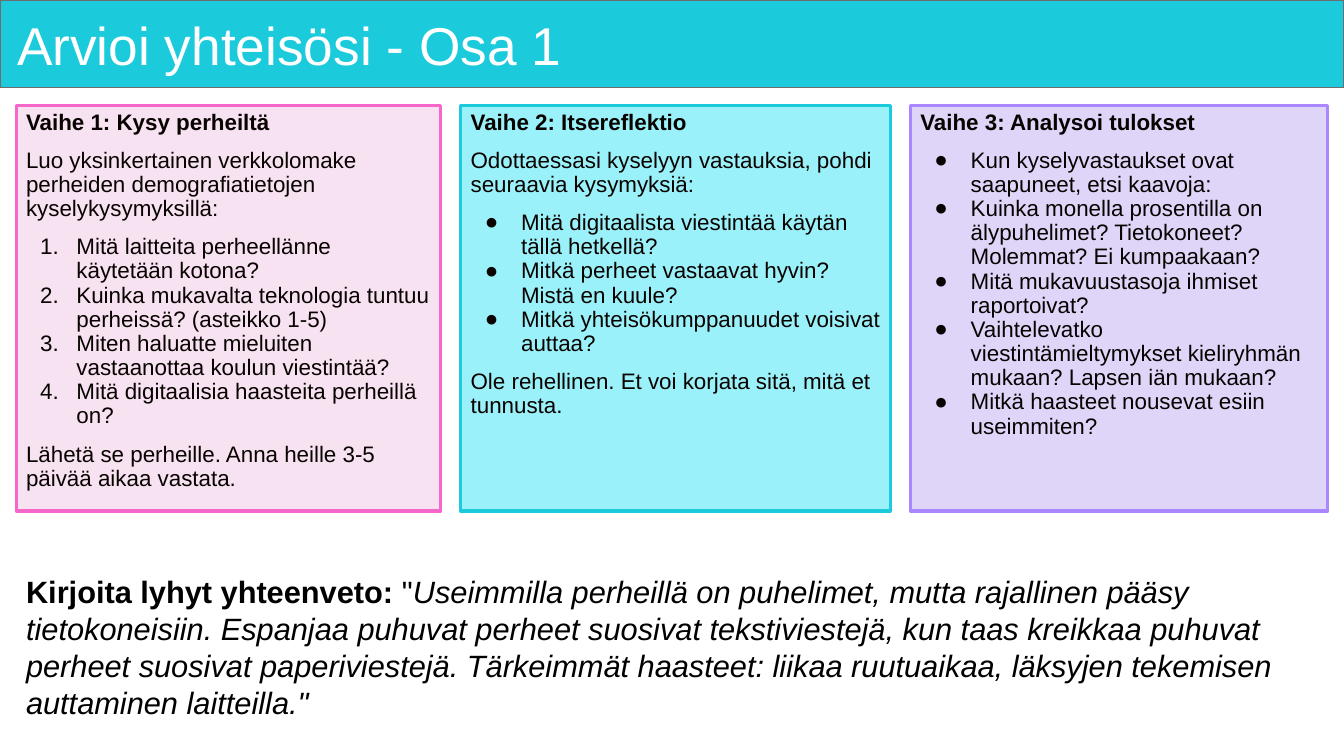
from dataclasses import dataclass

from lxml import etree
from pptx import Presentation
from pptx import util as u
from pptx.dml.color import RGBColor
from pptx.enum import shapes, text
from pptx.oxml.ns import qn


@dataclass(frozen=True)
class Theme:
    font: str = "Arial"
    title_size: int = 38
    step_size: int = 16
    summary_size: int = 22
    white: str = "FFFFFF"
    ink: str = "080301"
    black: str = "000000"
    turquoise: str = "1BCBDC"
    grey: str = "6C6E70"
    pink: tuple = ("F6E2F0", "F766CA")
    aqua: tuple = ("9BF1F9", "1BCBDC")
    violet: tuple = ("DFD5F8", "AA87FF")


THEME = Theme()
PLAIN, NUMBER, BULLET = "plain", "number", "bullet"

# Left, width, (fill, line), heading, paragraphs
STEPS = [
    (0.16, 4.21, THEME.pink, "Vaihe 1: Kysy perheiltä", [
        (PLAIN, "Luo yksinkertainen verkkolomake perheiden demografiatietojen kyselykysymyksillä:"),
        (NUMBER, "Mitä laitteita perheellänne käytetään kotona?"),
        (NUMBER, "Kuinka mukavalta teknologia tuntuu perheissä? (asteikko 1-5)"),
        (NUMBER, "Miten haluatte mieluiten vastaanottaa koulun viestintää?"),
        (NUMBER, "Mitä digitaalisia haasteita perheillä on?"),
        (PLAIN, "Lähetä se perheille. Anna heille 3-5 päivää aikaa vastata."),
    ]),
    (4.57, 4.26, THEME.aqua, "Vaihe 2: Itsereflektio", [
        (PLAIN, "Odottaessasi kyselyyn vastauksia, pohdi seuraavia kysymyksiä:"),
        (BULLET, "Mitä digitaalista viestintää käytän tällä hetkellä?"),
        (BULLET, "Mitkä perheet vastaavat hyvin? Mistä en kuule?"),
        (BULLET, "Mitkä yhteisökumppanuudet voisivat auttaa?"),
        (PLAIN, "Ole rehellinen. Et voi korjata sitä, mitä et tunnusta."),
    ]),
    (9.03, 4.14, THEME.violet, "Vaihe 3: Analysoi tulokset", [
        (BULLET, "Kun kyselyvastaukset ovat saapuneet, etsi kaavoja:"),
        (BULLET, "Kuinka monella prosentilla on älypuhelimet? Tietokoneet? Molemmat? Ei kumpaakaan?"),
        (BULLET, "Mitä mukavuustasoja ihmiset raportoivat?"),
        (BULLET, "Vaihtelevatko viestintämieltymykset kieliryhmän mukaan? Lapsen iän mukaan?"),
        (BULLET, "Mitkä haasteet nousevat esiin useimmiten?"),
    ]),
]

SUMMARY = [
    ("Kirjoita lyhyt yhteenveto: ", {"bold": True}),
    ('"', {}),
    ("Useimmilla perheillä on puhelimet, mutta rajallinen pääsy tietokoneisiin. "
     "Espanjaa puhuvat perheet suosivat tekstiviestejä, kun taas kreikkaa puhuvat "
     "perheet suosivat paperiviestejä. Tärkeimmät haasteet: liikaa ruutuaikaa, "
     'läksyjen tekemisen auttaminen laitteilla."', {"italic": True}),
]


def apply(target, values):
    for name, value in values.items():
        setattr(target, name, value)


class SlideBuilder:
    def __init__(self, page, theme):
        self.page = page
        self.theme = theme

    def frame(self, box, side, top, anchor):
        """Set the margins, wrapping and anchor of a box's text."""
        apply(box.text_frame, {
            "margin_left": u.Inches(side), "margin_right": u.Inches(side),
            "margin_top": u.Inches(top), "margin_bottom": u.Inches(top),
            "word_wrap": True, "auto_size": text.MSO_AUTO_SIZE.NONE,
            "vertical_anchor": anchor,
        })
        return box.text_frame

    def span(self, para, words, size, color, **style):
        span = para.add_run()
        span.text = words
        apply(span.font, {"name": self.theme.font, "size": u.Pt(size), **style})
        span.font.color.rgb = RGBColor.from_string(color)

    def marker(self, para, kind):
        """Give a paragraph its hanging indent and its number or bullet."""
        props = para._p.get_or_add_pPr()
        props.set("marL", str(u.Inches(0.5)))
        props.set("indent", str(u.Inches(-0.36)))
        color = etree.SubElement(props, qn("a:buClr"))
        etree.SubElement(color, qn("a:srgbClr"), val=self.theme.ink)
        etree.SubElement(props, qn("a:buFont"), typeface=self.theme.font)
        if kind == NUMBER:
            etree.SubElement(props, qn("a:buAutoNum"), type="arabicPeriod")
        else:
            etree.SubElement(props, qn("a:buChar"), char="●")

    def panel(self, left, top, width, height, fill, line, weight):
        panel = self.page.shapes.add_shape(
            shapes.MSO_SHAPE.RECTANGLE,
            *map(u.Inches, (left, top, width, height)))
        panel.shadow.inherit = False
        panel.fill.solid()
        panel.fill.fore_color.rgb = RGBColor.from_string(fill)
        panel.line.color.rgb = RGBColor.from_string(line)
        panel.line.width = u.Pt(weight)
        return panel

    def title(self, words):
        band = self.panel(0, 0, 13.33, 0.87, self.theme.turquoise, self.theme.grey, 1)
        title = self.page.shapes.title
        title._element.addprevious(band._element)
        apply(title, {"left": u.Inches(0.11), "top": u.Inches(0.09),
                      "width": u.Inches(13.06), "height": u.Inches(0.78)})
        para = self.frame(title, 0.06, 0.06, text.MSO_ANCHOR.MIDDLE).paragraphs[0]
        apply(para, {"alignment": text.PP_ALIGN.LEFT, "line_spacing": 0.9})
        self.span(para, words, self.theme.title_size, self.theme.white)

    def step(self, left, width, colors, heading, lines):
        box = self.panel(left, 1.05, width, 4.02, *colors, 2.25)
        frame = self.frame(box, 0.1, 0.05, text.MSO_ANCHOR.TOP)
        para = frame.paragraphs[0]
        apply(para, {"alignment": text.PP_ALIGN.LEFT, "line_spacing": 0.9})
        self.span(para, heading, self.theme.step_size, self.theme.ink, bold=True)
        previous = PLAIN
        for kind, words in lines:
            para = frame.add_paragraph()
            in_list = kind == previous != PLAIN
            apply(para, {"alignment": text.PP_ALIGN.LEFT, "line_spacing": 0.9,
                         "space_before": u.Pt(0 if in_list else 10)})
            if kind != PLAIN:
                self.marker(para, kind)
            self.span(para, words, self.theme.step_size, self.theme.ink)
            previous = kind

    def summary(self, spans):
        box = self.page.shapes.add_textbox(
            *map(u.Inches, (0.16, 5.58, 13.01, 1.31)))
        para = self.frame(box, 0.1, 0.1, text.MSO_ANCHOR.TOP).paragraphs[0]
        for words, style in spans:
            self.span(para, words, self.theme.summary_size, self.theme.black, **style)


def main():
    deck = Presentation()
    deck.slide_width, deck.slide_height = u.Inches(13.33), u.Inches(7.5)
    builder = SlideBuilder(deck.slides.add_slide(deck.slide_layouts[5]), THEME)
    builder.title("Arvioi yhteisösi - Osa 1")
    for step in STEPS:
        builder.step(*step)
    builder.summary(SUMMARY)
    deck.save("out.pptx")


if __name__ == "__main__":
    main()
